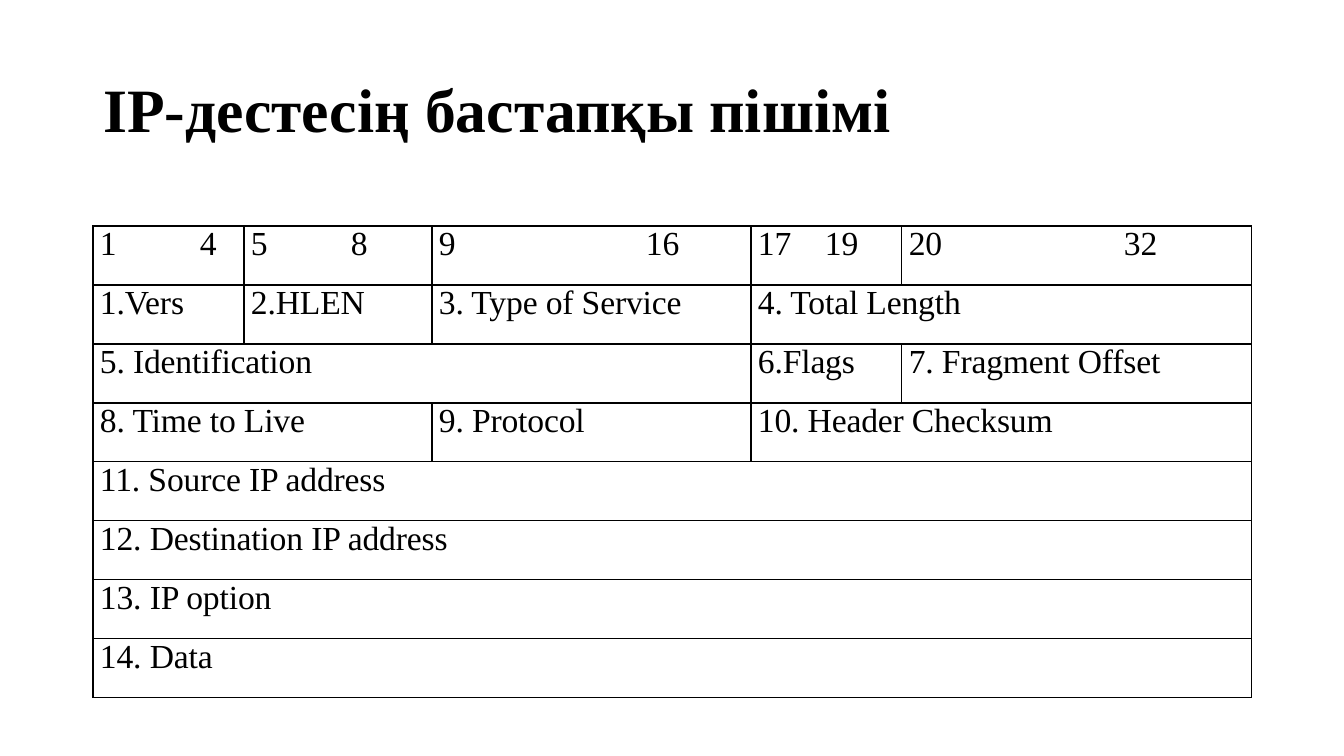
from lxml.etree import SubElement
from pptx import Presentation
from pptx.dml.color import RGBColor
from pptx.enum.text import MSO_ANCHOR, MSO_AUTO_SIZE, PP_ALIGN
from pptx.oxml import parse_xml
from pptx.oxml.ns import nsdecls, qn
from pptx.util import Pt

EMU_PER_PX = 12192000 / 1344

COLUMN_WIDTHS = [151, 188, 319, 151, 350]
ROW_HEIGHT = 59

# Each cell: text, columns spanned, tab stop in px (0 for none)
HEADER_ROWS = [
    [("1\t4", 1, 100), ("5\t8", 1, 100), ("9\t16", 1, 207),
     ("17\t19", 1, 67), ("20\t32", 1, 215)],
    [("1.Vers", 1, 0), ("2.HLEN", 1, 0), ("3. Type of Service", 1, 0),
     ("4. Total Length", 2, 0)],
    [("5. Identification", 3, 0), ("6.Flags", 1, 0),
     ("7. Fragment Offset", 1, 0)],
    [("8. Time to Live", 2, 0), ("9. Protocol", 1, 0),
     ("10. Header Checksum", 2, 0)],
    [("11. Source IP address", 5, 0)],
    [("12. Destination IP address", 5, 0)],
    [("13. IP option", 5, 0)],
    [("14. Data", 5, 0)],
]


def px(length):
    return round(length * EMU_PER_PX)


def color(hex_string):
    return RGBColor.from_string(hex_string)


class SlideBuilder:
    font = "Times New Roman"
    ink = "000000"
    paper = "FFFFFF"

    def __init__(self, slide):
        self.slide = slide
        slide.background.fill.solid()
        slide.background.fill.fore_color.rgb = color(self.paper)

    def add_run(self, paragraph, text, size, bold=False):
        run = paragraph.add_run()
        run.text = text
        run.font.name = self.font
        run.font.size = Pt(size)
        run.font.bold = bold
        run.font.color.rgb = color(self.ink)
        return run

    def title(self, text, left, top, width, height):
        shape = self.slide.shapes.title
        shape.left, shape.top = px(left), px(top)
        shape.width, shape.height = px(width), px(height)
        frame = shape.text_frame
        frame.word_wrap = True
        frame.auto_size = MSO_AUTO_SIZE.NONE
        frame.vertical_anchor = MSO_ANCHOR.MIDDLE
        paragraph = frame.paragraphs[0]
        paragraph.alignment = PP_ALIGN.LEFT
        paragraph.line_spacing = 0.9
        self.add_run(paragraph, text, 44, bold=True)

    def table(self, rows, column_widths, row_height, left, top):
        frame = self.slide.shapes.add_table(
            len(rows), len(column_widths), px(left), px(top),
            px(sum(column_widths)), px(row_height * len(rows)))
        table = frame.table
        table.first_row = table.horz_banding = False
        for column, width in zip(table.columns, column_widths):
            column.width = px(width)
        for row in table.rows:
            row.height = px(row_height)
            for cell in row.cells:
                self.style_cell(cell)
        for row_index, row_cells in enumerate(rows):
            column_index = 0
            for text, span, tab in row_cells:
                cell = table.cell(row_index, column_index)
                column_index += span
                if span > 1:
                    cell.merge(table.cell(row_index, column_index - 1))
                self.fill_cell(cell, text, tab)

    def style_cell(self, cell):
        cell.margin_left = cell.margin_right = px(7)
        cell.margin_top = cell.margin_bottom = 0
        cell.fill.solid()
        cell.fill.fore_color.rgb = color(self.paper)
        properties = cell._tc.get_or_add_tcPr()
        for index, side in enumerate("LRTB"):
            properties.insert(index, parse_xml(
                f'<a:ln{side} {nsdecls("a")} w="{Pt(1)}"><a:solidFill>'
                f'<a:srgbClr val="{self.ink}"/></a:solidFill></a:ln{side}>'))

    def fill_cell(self, cell, text, tab):
        paragraph = cell.text_frame.paragraphs[0]
        paragraph.alignment = PP_ALIGN.JUSTIFY
        if tab:
            properties = paragraph._p.get_or_add_pPr()
            tab_list = SubElement(properties, qn("a:tabLst"))
            SubElement(tab_list, qn("a:tab"), pos=str(px(tab)), algn="l")
        run = self.add_run(paragraph, text, 24)
        run.font._element.set("spc", "-10")


def main():
    presentation = Presentation()
    presentation.slide_width = px(1344)
    presentation.slide_height = px(756)
    title_only = presentation.slide_layouts[5]
    builder = SlideBuilder(presentation.slides.add_slide(title_only))
    builder.title("IP-дестесің бастапқы пішімі", 93, 40, 1159, 146)
    builder.table(HEADER_ROWS, COLUMN_WIDTHS, ROW_HEIGHT, 93, 226)
    presentation.save("out.pptx")


if __name__ == "__main__":
    main()
